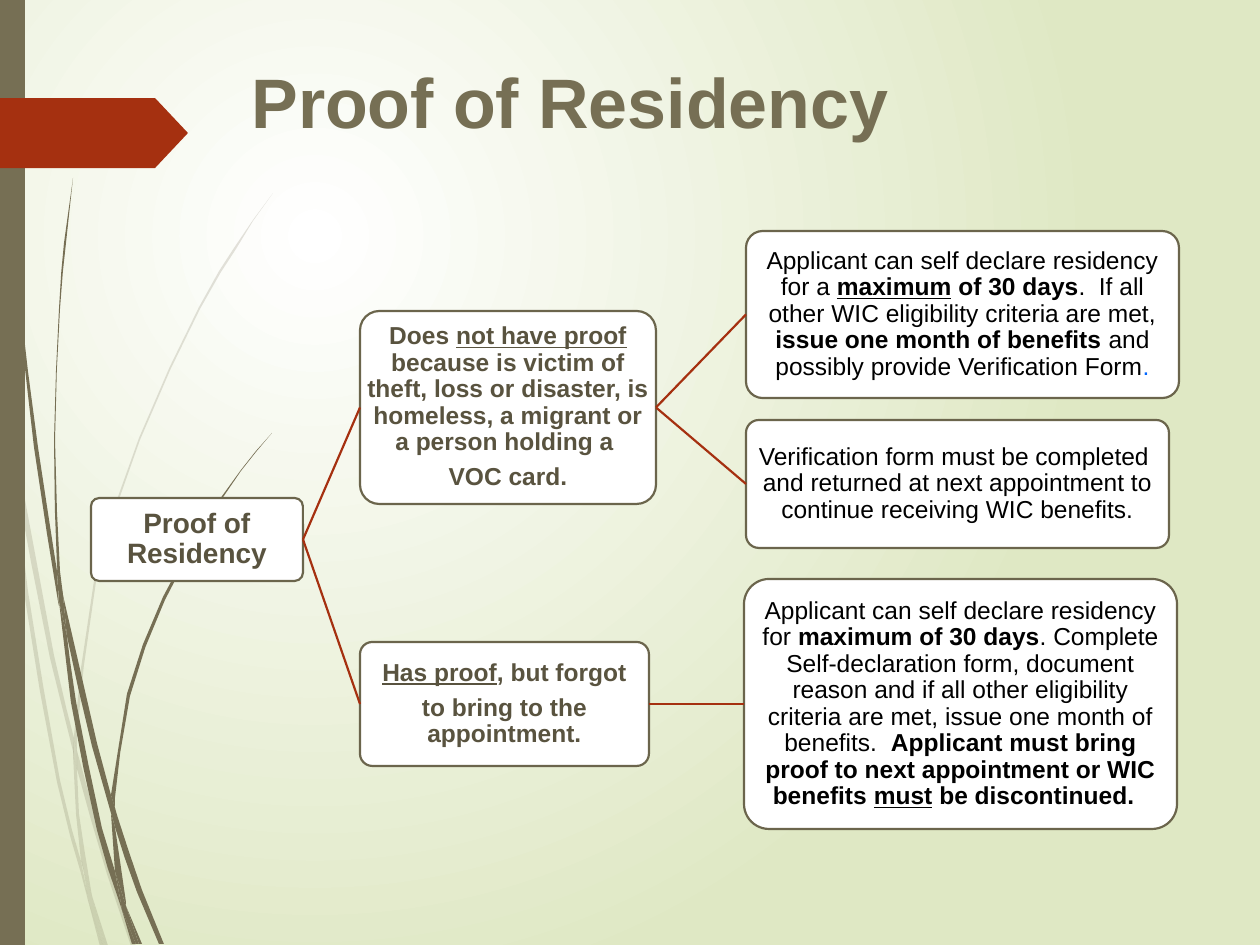
from dataclasses import dataclass
from typing import Any, NamedTuple
import math

import lxml.etree
import pptx
import pptx.dml.color
import pptx.enum.shapes
import pptx.enum.text
import pptx.oxml
import pptx.oxml.ns
import pptx.util

RGB = pptx.dml.color.RGBColor
SHAPES = pptx.enum.shapes.MSO_SHAPE
ALIGN = pptx.enum.text.PP_ALIGN
ANCHOR = pptx.enum.text.MSO_ANCHOR
qn = pptx.oxml.ns.qn

EMU_PER_PX = 914400 / 126
WIDTH, HEIGHT = 1260, 945

WHITE = RGB(0xFF, 0xFF, 0xFF)
BLACK = RGB(0x00, 0x00, 0x00)
PALE_GREEN = RGB(0xDF, 0xE8, 0xC4)
OLIVE = RGB(0x76, 0x6F, 0x54)
OLIVE_LINE = RGB(0x6B, 0x65, 0x4C)
OLIVE_TEXT = RGB(0x59, 0x53, 0x3F)
RUST = RGB(0xA5, 0x30, 0x10)
BLUE = RGB(0x00, 0x66, 0xFF)

Outline = list[tuple[float, float]]


class Run(NamedTuple):
    text: str
    format: dict[str, Any] = {}


@dataclass(frozen=True)
class Box:
    left: int
    top: int
    width: int
    height: int
    paragraphs: list[list[Run]]
    size: int = 14
    color: RGB = BLACK
    bold: bool = False


BOLD = {"bold": True}
UNDERLINE = {"underline": True}
BOLD_UNDERLINE = BOLD | UNDERLINE
BRANCH = {"color": OLIVE_TEXT, "bold": True}

# Outlines of the grass: each blade is made of several pieces.
PALE_GRASS: list[Outline] = [
    [(10, 441), (8, 406), (0, 355), (0, 377), (9, 433)],
    [(50, 658), (74, 755), (74, 738), (54, 655), (13, 435), (15, 474)],
    [(81, 765), (77, 751), (77, 769), (107, 874), (131, 946), (136, 946), (111, 872)],
    [(105, 946), (108, 946), (92, 896)],
    [(81, 861), (60, 780), (28, 591), (15, 474), (10, 441), (24, 592), (57, 782), (81, 873),
     (88, 900), (87, 891)],
    [(73, 755), (76, 814), (81, 861), (84, 872), (92, 896), (91, 890), (79, 814), (77, 769)],
    [(77, 736), (96, 582), (140, 440), (200, 309), (236, 249), (253, 221), (273, 193),
     (253, 220), (234, 248), (199, 307), (139, 438), (94, 581), (74, 736), (74, 738), (77, 751)],
    [(88, 900), (100, 946), (103, 946)],
    [(77, 769), (77, 751), (74, 738), (73, 755)],
    [(84, 872), (82, 861), (87, 891), (88, 900), (103, 946), (105, 946), (92, 896)],
]
DARK_GRASS: list[Outline] = [
    [(6, 139), (18, 294), (34, 447), (58, 601), (59, 606), (57, 571), (38, 447), (19, 292),
     (8, 137), (5, 60), (4, 0), (3, 0), (4, 60)],
    [(92, 746), (111, 813), (111, 795), (97, 743), (63, 595), (67, 636)],
    [(118, 818), (115, 808), (115, 827), (137, 892), (159, 944), (164, 944), (142, 890)],
    [(115, 871), (102, 828), (76, 701), (67, 636), (59, 601), (71, 702), (97, 830), (116, 892),
     (122, 910), (121, 903)],
    [(63, 595), (60, 571), (55, 440), (60, 309), (66, 243), (73, 178), (64, 243), (59, 309),
     (54, 440), (57, 566), (62, 595)],
    [(139, 944), (142, 944), (126, 906)],
    [(59, 601), (67, 636), (63, 595), (57, 566), (57, 571)],
    [(115, 798), (130, 696), (165, 600), (213, 512), (241, 471), (256, 452), (272, 433),
     (256, 451), (241, 470), (212, 510), (163, 597), (127, 694), (111, 795), (115, 808)],
    [(122, 910), (132, 944), (136, 944)],
    [(111, 813), (115, 871), (121, 890), (126, 906), (126, 902), (115, 827), (113, 820)],
    [(111, 813), (115, 827), (115, 808), (111, 795)],
    [(121, 890), (115, 871), (121, 903), (122, 910), (136, 944), (139, 944), (126, 906)],
]

ROOT = Box(91, 498, 212, 83, [[Run("Proof of Residency")]], 16, **BRANCH)
NO_PROOF = Box(360, 311, 296, 193, [
    [Run("Does "), Run("not have proof ", UNDERLINE),
     Run("because is victim of theft, loss or disaster, is homeless, a migrant "
         "or a person holding a ")],
    [Run("VOC card.")],
], **BRANCH)
HAS_PROOF = Box(360, 642, 289, 124, [
    [Run("Has proof", UNDERLINE), Run(", but forgot")],
    [Run("to bring to the appointment.")],
], **BRANCH)
SELF_DECLARE = Box(746, 231, 433, 167, [[
    Run("Applicant can self declare residency for a "),
    Run("maximum", BOLD_UNDERLINE),
    Run(" of 30 days", BOLD),
    Run(".  If all other WIC eligibility criteria are met, "),
    Run("issue one month of benefits ", BOLD),
    Run("and possibly provide Verification Form"),
    Run(".", {"color": BLUE}),
]])
VERIFICATION = Box(746, 420, 423, 128, [[
    Run("Verification form must be completed  and returned at next appointment "
        "to continue receiving WIC benefits."),
]])
FORGOTTEN = Box(744, 579, 433, 250, [[
    Run("Applicant can self declare residency for "),
    Run("maximum of 30 days", BOLD),
    Run(". Complete Self-declaration form, document reason and if all other "
        "eligibility criteria are met, issue one month of benefits.  "),
    Run("Applicant must bring proof to next appointment or WIC benefits ", BOLD),
    Run("must", BOLD_UNDERLINE),
    Run(" be discontinued.  ", BOLD),
]])
BOXES = [ROOT, NO_PROOF, HAS_PROOF, SELF_DECLARE, VERIFICATION, FORGOTTEN]
LINKS = [(ROOT, NO_PROOF), (ROOT, HAS_PROOF), (NO_PROOF, SELF_DECLARE),
         (NO_PROOF, VERIFICATION), (HAS_PROOF, FORGOTTEN)]


def px(length: float) -> pptx.util.Emu:
    return pptx.util.Emu(round(length * EMU_PER_PX))


def set_format(target: Any, values: dict[str, Any]) -> None:
    for name, value in values.items():
        if name == "color":
            target.color.rgb = value
        else:
            setattr(target, name, value)


def paint(shape: Any, color: RGB) -> None:
    shape.shadow.inherit = False
    shape.fill.solid()
    shape.fill.fore_color.rgb = color
    shape.line.fill.background()


def paint_background(slide: Any) -> None:
    """Fill with a round gradient centred a quarter of the way in."""
    fill = slide.background.fill
    fill.gradient()
    for stop, color in zip(fill.gradient_stops, (WHITE, PALE_GREEN)):
        stop.color.rgb = color
    gradient = slide.element.find(".//" + qn("a:gradFill"))
    gradient.remove(gradient.find(qn("a:lin")))
    circle = lxml.etree.SubElement(gradient, qn("a:path"), path="circle")
    lxml.etree.SubElement(circle, qn("a:fillToRect"),
                          l="50000", t="50000", r="100000", b="100000")


def smooth(outline: Outline) -> Outline:
    """Add a point on the curve halfway along each long side between gentle turns."""
    curve = []
    for i, b in enumerate(outline):
        a, c, d = (outline[(i + k) % len(outline)] for k in (-1, 1, 2))
        curve.append(b)
        first, side, last = (math.atan2(q[1] - p[1], q[0] - p[0])
                             for p, q in ((a, b), (b, c), (c, d)))
        gentle = min(math.cos(side - first), math.cos(last - side)) > 0.9
        if gentle and math.dist(b, c) > 60:
            curve.append(tuple((9 * (q + r) - p - s) / 16 for p, q, r, s in zip(a, b, c, d)))
    return curve


def draw_grass(slide: Any, outline: Outline, opacity: int) -> None:
    points = [(px(x), px(y)) for x, y in smooth(outline)]
    builder = slide.shapes.build_freeform(*points[0])
    builder.add_line_segments(points[1:])
    shape = builder.convert_to_shape()
    paint(shape, OLIVE)
    if opacity < 100:
        color = shape.element.spPr.find(".//" + qn("a:srgbClr"))
        lxml.etree.SubElement(color, qn("a:alpha"), val=str(opacity * 1000))


def draw_box(slide: Any, box: Box) -> Any:
    shape = slide.shapes.add_shape(SHAPES.ROUNDED_RECTANGLE, px(box.left), px(box.top),
                                   px(box.width), px(box.height))
    shape.adjustments[0] = 0.1
    paint(shape, WHITE)
    set_format(shape.line, {"color": OLIVE_LINE, "width": pptx.util.Pt(1.25)})
    frame = shape.text_frame
    margins = {f"margin_{side}": px(1) for side in ("left", "top", "right", "bottom")}
    set_format(frame, margins | {"word_wrap": True, "vertical_anchor": ANCHOR.MIDDLE})
    for i, runs in enumerate(box.paragraphs):
        paragraph = frame.add_paragraph() if i else frame.paragraphs[0]
        set_format(paragraph, {"alignment": ALIGN.CENTER, "line_spacing": 0.9,
                               "space_before": pptx.util.Pt(5 if i else 0)})
        for text, extra in runs:
            run = paragraph.add_run()
            run.text = text
            set_format(run.font, {"name": "Arial", "size": pptx.util.Pt(box.size),
                                  "bold": box.bold, "color": box.color} | extra)
    return shape


def draw_link(slide: Any, parent: Any, child: Any) -> None:
    link = slide.shapes.add_connector(pptx.enum.shapes.MSO_CONNECTOR.STRAIGHT, 0, 0, 0, 0)
    link.begin_connect(parent, 3)
    link.end_connect(child, 1)
    set_format(link.line, {"color": RUST, "width": pptx.util.Pt(1.25)})
    lxml.etree.SubElement(link.element.spPr, qn("a:effectLst"))


def write_title(slide: Any) -> None:
    title = slide.shapes.title
    set_format(title, {"left": px(79), "top": px(52), "width": px(982), "height": px(147)})
    title.text_frame.text = "Proof of Residency"
    title.text_frame.vertical_anchor = ANCHOR.TOP
    paragraph = title.text_frame.paragraphs[0]
    paragraph.alignment = ALIGN.CENTER
    set_format(paragraph.runs[0].font, {"name": "Arial", "size": pptx.util.Pt(40),
                                        "bold": True, "color": OLIVE})


def main() -> None:
    deck = pptx.Presentation()
    set_format(deck, {"slide_width": px(WIDTH), "slide_height": px(HEIGHT)})
    slide = deck.slides.add_slide(deck.slide_layouts[5])
    paint_background(slide)
    for grass, opacity in ((PALE_GRASS, 20), (DARK_GRASS, 100)):
        for outline in grass:
            draw_grass(slide, outline, opacity)
    side_bar = slide.shapes.add_shape(SHAPES.RECTANGLE, 0, 0, px(25), px(HEIGHT))
    paint(side_bar, OLIVE)
    pointer = slide.shapes.add_shape(SHAPES.PENTAGON, 0, px(98), px(188), px(70))
    pointer.adjustments[0] = 0.47
    paint(pointer, RUST)
    write_title(slide)
    drawn = [draw_box(slide, box) for box in BOXES]
    for parent, child in LINKS:
        draw_link(slide, drawn[BOXES.index(parent)], drawn[BOXES.index(child)])
    deck.save("out.pptx")


if __name__ == "__main__":
    main()
